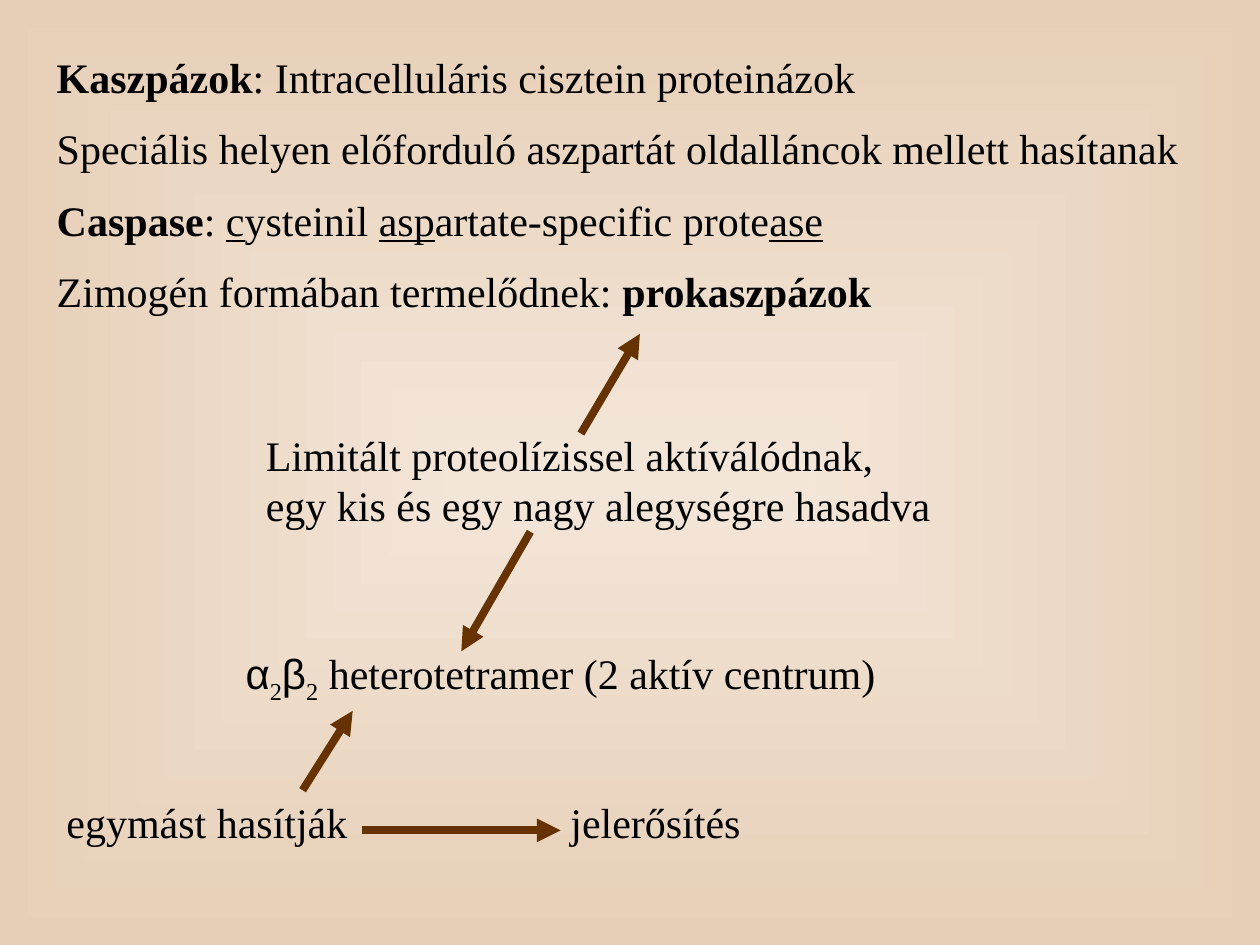
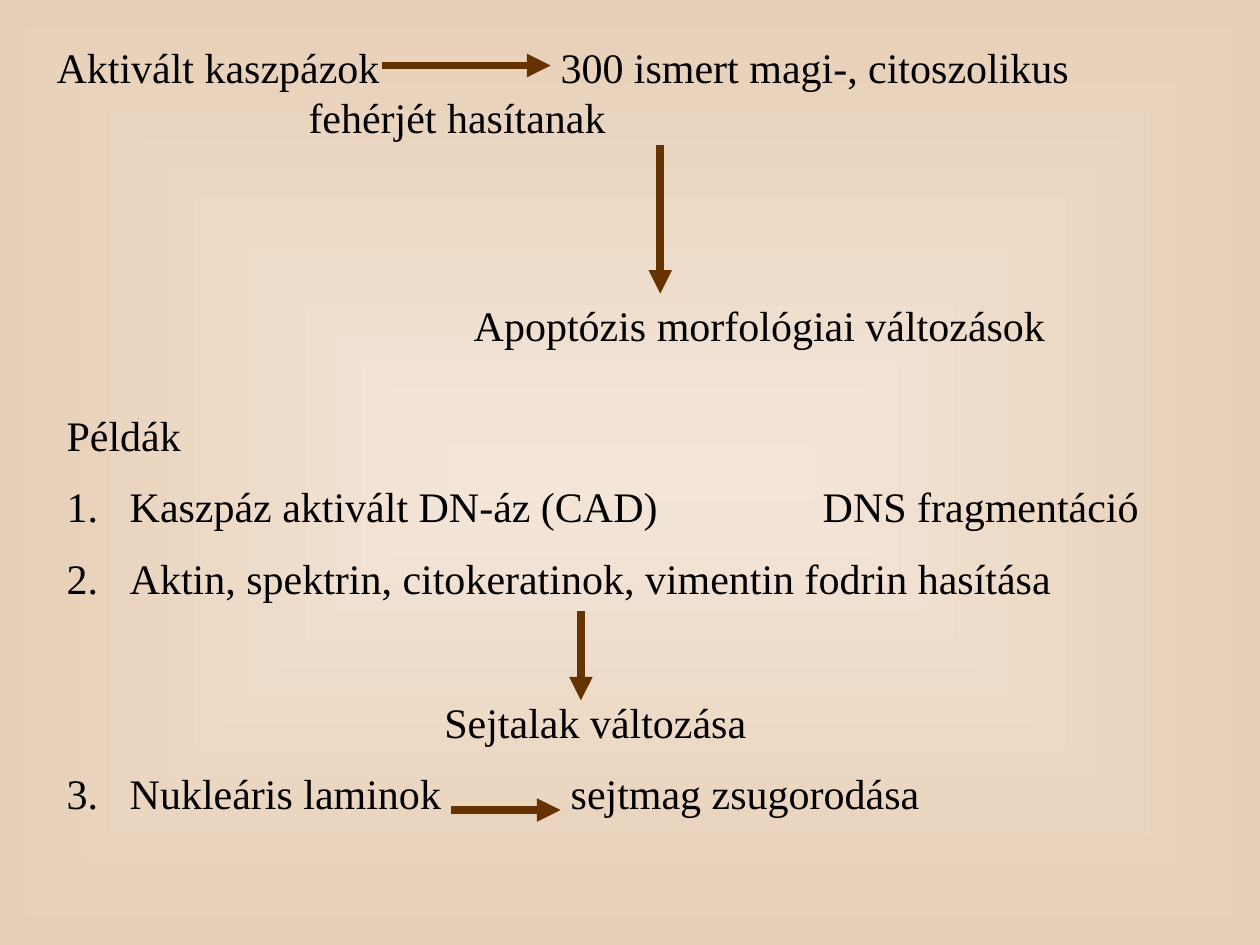
from dataclasses import dataclass

from lxml.etree import SubElement
from pptx import Presentation
from pptx.dml.color import RGBColor
from pptx.enum.shapes import MSO_CONNECTOR as Connector
from pptx.enum.text import MSO_ANCHOR as Anchor, MSO_AUTO_SIZE as AutoSize
from pptx.oxml.ns import qn
from pptx.shapes.base import BaseShape
from pptx.slide import Slide, SlideMaster
from pptx.text.text import TextFrame
from pptx.util import Cm, Pt

SERIF, SANS = "Times New Roman", "Arial"
TEXT_COLOR, ARROW_COLOR = "000000", "663300"
CENTER_COLOR, EDGE_COLOR = "F3E6D9", "E7CFB7"
TEXT_SIZE = 24
PARAGRAPH_GAP = 12
LINE_HEIGHT = 1.27
NUMBER_INDENT = 1.27


@dataclass(frozen=True)
class Piece:
    text: str
    bold: bool = False
    underline: bool = False
    subscript: bool = False
    font: str = SERIF


@dataclass(frozen=True)
class Line:
    """One paragraph; tab stops and first-line indent are in centimetres."""
    content: str | tuple[Piece, ...]
    tabs: tuple[float, ...] = ()
    gap: float = PARAGRAPH_GAP
    first_line: float = 0
    numbered: bool = False


@dataclass(frozen=True)
class Block:
    left: float
    top: float
    width: float
    height: float
    lines: tuple[Line, ...]


@dataclass(frozen=True)
class Arrow:
    start: tuple[float, float]
    end: tuple[float, float]


@dataclass(frozen=True)
class Page:
    body: Block
    labels: tuple[Block, ...]
    arrows: tuple[Arrow, ...]


CASPASES = Page(
    body=Block(0.89, 0.91, 24, 5.84, (
        Line((Piece("Kaszpázok", bold=True),
              Piece(": Intracelluláris cisztein proteinázok"))),
        Line("Speciális helyen előforduló aszpartát oldalláncok mellett hasítanak"),
        Line((Piece("Caspase", bold=True), Piece(": "),
              Piece("c", underline=True), Piece("ysteinil "),
              Piece("asp", underline=True), Piece("artate-specific prote"),
              Piece("ase", underline=True))),
        Line((Piece("Zimogén formában termelődnek: "),
              Piece("prokaszpázok", bold=True))),
    )),
    labels=(
        Block(5.11, 8.53, 14, 2.29, (
            Line("Limitált proteolízissel aktíválódnak, "
                 "egy kis és egy nagy alegységre hasadva"),)),
        Block(4.7, 12.93, 15.19, LINE_HEIGHT, (
            Line((Piece("α", font=SANS), Piece("2", subscript=True),
                  Piece("β", font=SANS), Piece("2", subscript=True),
                  Piece(" heterotetramer (2 aktív centrum)"))),)),
        Block(1.09, 15.93, 7, LINE_HEIGHT, (Line("egymást hasítják"),)),
        Block(11.25, 15.93, 5, LINE_HEIGHT, (Line("jelerősítés"),)),
    ),
    arrows=(
        Arrow((11.71, 8.74), (12.9, 6.73)),
        Arrow((10.69, 10.72), (9.3, 13.13)),
        Arrow((6.1, 15.93), (7.11, 14.33)),
        Arrow((7.29, 16.74), (11.3, 16.74)),
    ),
)

EXAMPLES = Page(
    body=Block(1.09, 8.13, 23.22, 8.86, (
        Line("Példák"),
        Line("Kaszpáz aktivált DN-áz (CAD)\tDNS fragmentáció",
             tabs=(15.24,), numbered=True),
        Line("Aktin, spektrin, citokeratinok, vimentin fodrin hasítása",
             numbered=True),
        Line("Nukleáris laminok\tsejtmag zsugorodása",
             tabs=(10.16,), gap=94, numbered=True),
    )),
    labels=(
        Block(0.89, 0.71, 7.4, LINE_HEIGHT, (Line("Aktivált kaszpázok"),)),
        Block(5.97, 0.71, 17.5, 2.29, (
            Line("300 ismert magi-, citoszolikus fehérjét hasítanak",
                 first_line=5.08),)),
        Block(9.3, 5.92, 12.4, LINE_HEIGHT, (
            Line("Apoptózis morfológiai változások"),)),
        Block(8.71, 13.92, 6.81, LINE_HEIGHT, (Line("Sejtalak változása"),)),
    ),
    arrows=(
        Arrow((7.7, 1.32), (11.1, 1.32)),
        Arrow((13.31, 2.92), (13.31, 5.92)),
        Arrow((11.71, 12.32), (11.71, 14.12)),
        Arrow((9.09, 16.33), (11.3, 16.33)),
    ),
)


def color(hex_code: str) -> RGBColor:
    return RGBColor.from_string(hex_code)


def set_background(master: SlideMaster) -> None:
    """Give every slide a gradient from a light centre to a darker edge."""
    fill = master.background.fill
    fill.gradient()
    for stop, hex_code in zip(fill.gradient_stops, (CENTER_COLOR, EDGE_COLOR)):
        stop.color.rgb = color(hex_code)
    gradient = next(master.element.iter(qn("a:gradFill")))
    gradient.remove(gradient.find(qn("a:lin")))
    shading = SubElement(gradient, qn("a:path"), {"path": "shape"})
    SubElement(shading, qn("a:fillToRect"),
               {side: "50000" for side in ("l", "t", "r", "b")})


def write_lines(text_frame: TextFrame, lines: tuple[Line, ...]) -> None:
    text_frame.word_wrap = True
    text_frame.auto_size = AutoSize.NONE
    text_frame.vertical_anchor = Anchor.TOP
    for index, line in enumerate(lines):
        paragraph = text_frame.add_paragraph() if index else text_frame.paragraphs[0]
        paragraph.space_before = Pt(line.gap if index else 0)
        if isinstance(line.content, str):
            paragraph.text = line.content
            pieces = [Piece(run.text) for run in paragraph.runs]
        else:
            pieces = line.content
            for piece in pieces:
                paragraph.add_run().text = piece.text
        for run, piece in zip(paragraph.runs, pieces):
            font = run.font
            font.name, font.size = piece.font, Pt(TEXT_SIZE)
            font.bold, font.underline = piece.bold, piece.underline
            font.color.rgb = color(TEXT_COLOR)
            if piece.subscript:
                run._r.get_or_add_rPr().set("baseline", "-25000")

        properties = paragraph._p.get_or_add_pPr()
        margin = NUMBER_INDENT if line.numbered else 0
        first_line = -NUMBER_INDENT if line.numbered else line.first_line
        properties.set("marL", str(Cm(margin)))
        properties.set("indent", str(Cm(first_line)))
        if line.numbered:
            SubElement(properties, qn("a:buFont"), {"typeface": SERIF})
            SubElement(properties, qn("a:buAutoNum"), {"type": "arabicPeriod"})
        else:
            SubElement(properties, qn("a:buNone"))
        if line.tabs:
            tab_list = SubElement(properties, qn("a:tabLst"))
            for position in line.tabs:
                SubElement(tab_list, qn("a:tab"),
                           {"pos": str(Cm(position)), "algn": "l"})


def fill_body(shape: BaseShape, block: Block) -> None:
    shape.left, shape.top = Cm(block.left), Cm(block.top)
    shape.width, shape.height = Cm(block.width), Cm(block.height)
    write_lines(shape.text_frame, block.lines)


def add_label(slide: Slide, block: Block) -> None:
    shape = slide.shapes.add_textbox(Cm(block.left), Cm(block.top),
                                     Cm(block.width), Cm(block.height))
    write_lines(shape.text_frame, block.lines)


def add_arrow(slide: Slide, arrow: Arrow) -> None:
    points = [Cm(value) for value in (*arrow.start, *arrow.end)]
    connector = slide.shapes.add_connector(Connector.STRAIGHT, *points)
    connector.line.color.rgb = color(ARROW_COLOR)
    connector.line.width = Pt(4.5)
    SubElement(connector.line._get_or_add_ln(), qn("a:tailEnd"), {"type": "triangle"})
    SubElement(connector._element.spPr, qn("a:effectLst"))


def add_page(presentation: Presentation, page: Page) -> None:
    slide = presentation.slides.add_slide(
        presentation.slide_layouts.get_by_name("Title and Content"))
    title = slide.shapes.title.element
    title.getparent().remove(title)
    fill_body(slide.placeholders[1], page.body)
    for label in page.labels:
        add_label(slide, label)
    for arrow in page.arrows:
        add_arrow(slide, arrow)


def main() -> None:
    presentation = Presentation()
    presentation.slide_width, presentation.slide_height = Cm(25.4), Cm(19.05)
    set_background(presentation.slide_master)
    for page in (CASPASES, EXAMPLES):
        add_page(presentation, page)
    presentation.save("out.pptx")


if __name__ == "__main__":
    main()
